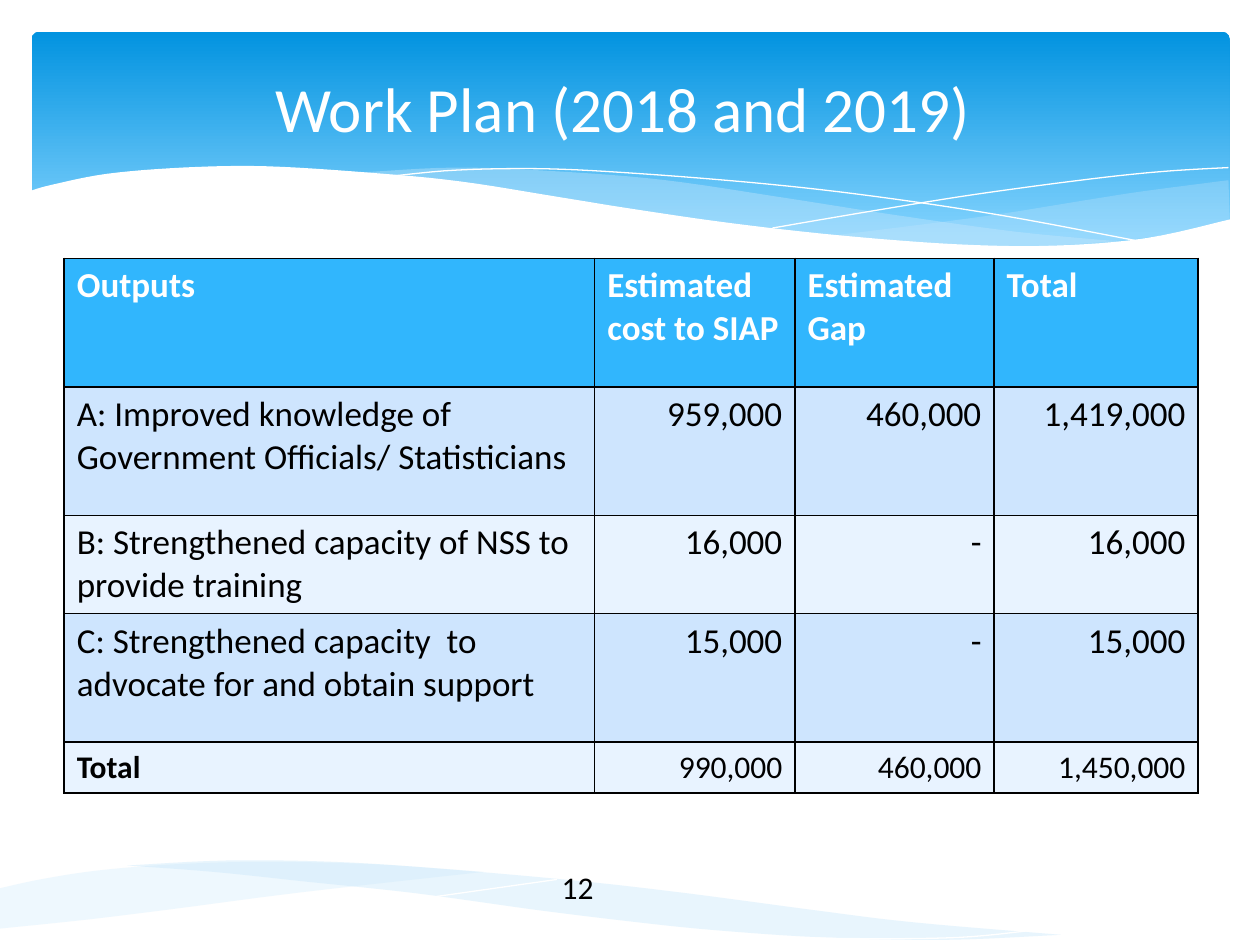
from pptx import Presentation
from pptx.dml.color import RGBColor
from pptx.enum.shapes import MSO_SHAPE as Preset
from pptx.enum.text import MSO_ANCHOR as Anchor, PP_ALIGN as Align
from pptx.oxml.ns import qn
from pptx.util import Inches, Pt
from lxml.etree import SubElement

COLORS = {
    "white": "FFFFFF", "black": "000000", "sky_top": "0293E0", "sky_bottom": "83D3FE",
    "wave": "C6E7FC", "header": "31B6FD", "band": "CEE5FE", "light": "E8F3FF",
}
FONT = "Calibri"
STEPS = 6

HEADER_RIGHT_WAVE = [
    [(9.5, 1.18), (8.81, 1.27), (8.36, 1.34), (7.54, 1.47), (6.36, 1.62)],
    [(6.36, 1.62), (7.07, 1.69), (7.78, 1.71), (8.38, 1.68), (8.96, 1.62), (9.51, 1.5)],
]
HEADER_LONG_WAVE = [
    [(8.68, 1.67), (7.82, 1.59), (6.81, 1.45), (6.04, 1.33), (5.03, 1.18), (4.17, 1.11),
     (3.36, 1.08), (2.61, 1.12)],
    [(2.61, 1.12), (3.58, 1.23), (4.24, 1.33), (5.41, 1.51), (6.4, 1.63), (7.36, 1.71),
     (8.13, 1.71), (8.68, 1.67)],
]
HEADER_LINES = [
    [(2.84, 1.15), (3.38, 1.1), (4.08, 1.09), (4.85, 1.13), (5.83, 1.21), (6.7, 1.31),
     (7.7, 1.46), (8.82, 1.67)],
    [(5.88, 1.56), (6.7, 1.42), (7.51, 1.29), (8.41, 1.17), (8.99, 1.11), (9.5, 1.08)],
]
HEADER_CUTOUT = [
    [(9.52, 1.49), (8.85, 1.64), (8.12, 1.7), (7.36, 1.69), (6.43, 1.62), (5.54, 1.52),
     (4.78, 1.41), (4.22, 1.32), (3.4, 1.19), (2.67, 1.12), (1.86, 1.07), (1.21, 1.08),
     (0.6, 1.13), (0.15, 1.22), (-0.02, 1.27)],
    [(-0.02, 2.05), (9.52, 2.05)],
]
FOOTER_LONG_WAVE = [
    [(1.01, 0.04), (1.8, 0), (2.63, 0.01), (3.43, 0.06), (4.57, 0.16), (5.45, 0.26),
     (6.43, 0.39), (7.24, 0.49), (8.42, 0.59)],
    [(8.42, 0.59), (7.5, 0.63), (6.52, 0.61), (5.64, 0.55), (4.97, 0.48), (4.24, 0.39),
     (3.3, 0.26), (2.45, 0.17), (1.69, 0.09), (1.01, 0.04)],
]
FOOTER_LINES = [
    [(0.84, 0.05), (1.77, 0.19), (2.63, 0.31), (3.43, 0.4), (4.15, 0.48), (5.12, 0.56),
     (5.95, 0.6), (6.83, 0.62), (7.61, 0.61), (8.14, 0.56)],
    [(0.01, 0.63), (0.64, 0.6), (1.34, 0.54), (2.07, 0.47), (2.79, 0.38), (3.43, 0.29),
     (4.42, 0.15)],
]
FOOTER_LEFT_WAVE = [
    [(0, 0.54), (0.68, 0.47), (1.41, 0.38), (2.41, 0.25), (3.84, 0.09)],
    [(3.84, 0.09), (2.98, 0.03), (2.11, 0.01), (1.38, 0.03), (0.77, 0.08), (0.32, 0.15),
     (0, 0.22)],
]
COLUMN_WIDTHS = [4.21, 1.59, 1.58, 1.62]
ROW_HEIGHTS = [1.02, 1.02, 0.78, 1.02, 0.4]
ROWS = [
    ["Outputs", "Estimated cost to SIAP", "Estimated Gap", "Total"],
    ["A: Improved knowledge of Government Officials/ Statisticians",
     "959,000", "460,000", "1,419,000"],
    ["B: Strengthened capacity of NSS to provide training", "16,000", "-", "16,000"],
    ["C: Strengthened capacity  to advocate for and obtain support", "15,000", "-", "15,000"],
    ["Total", "990,000", "460,000", "1,450,000"],
]


def rgb(name):
    return RGBColor.from_string(COLORS[name])


def smooth_curve(knots):
    if len(knots) < 3:
        return knots
    padded = [knots[0], *knots, knots[-1]]
    points = [knots[0]]
    for a, b, c, d in zip(padded, padded[1:], padded[2:], padded[3:]):
        for step in range(1, STEPS + 1):
            t = step / STEPS
            points.append(tuple(
                (2 * q + (r - p) * t + (2 * p - 5 * q + 4 * r - s) * t ** 2
                 + (3 * q - p - 3 * r + s) * t ** 3) / 2
                for p, q, r, s in zip(a, b, c, d)))
    return points


def add_curve(slide, box, edges, close):
    left, top = box[:2]
    points = [(Inches(left + x), Inches(top + y))
              for edge in edges for x, y in smooth_curve(edge)]
    builder = slide.shapes.build_freeform(*points[0])
    builder.add_line_segments(points[1:], close=close)
    shape = builder.convert_to_shape()
    shape.shadow.inherit = False
    return shape


def add_wave(slide, box, edges, color, opacity=100):
    shape = add_curve(slide, box, edges, True)
    shape.fill.solid()
    shape.fill.fore_color.rgb = rgb(color)
    shape.line.fill.background()
    if opacity < 100:
        fill_color = shape._element.spPr.find(".//" + qn("a:srgbClr"))
        SubElement(fill_color, qn("a:alpha"), val=str(opacity * 1000))


def add_hairline(slide, box, knots):
    shape = add_curve(slide, box, [knots], False)
    shape.fill.background()
    shape.line.color.rgb = rgb("white")
    shape.line.width = Pt(0)


def add_header(slide, box):
    panel = slide.shapes.add_shape(Preset.ROUNDED_RECTANGLE, *map(Inches, box))
    panel.adjustments[0] = 0.034
    panel.shadow.inherit = False
    panel.line.fill.background()
    panel.fill.gradient()
    panel.fill.gradient_angle = 270
    stops = zip(panel.fill.gradient_stops, ["sky_top", "sky_bottom"], [0, 0.9])
    for stop, color, position in stops:
        stop.color.rgb = rgb(color)
        stop.position = position
    add_wave(slide, box, HEADER_RIGHT_WAVE, "wave", 29)
    add_wave(slide, box, HEADER_LONG_WAVE, "wave", 40)
    for knots in HEADER_LINES:
        add_hairline(slide, box, knots)
    add_wave(slide, box, HEADER_CUTOUT, "white")


def add_footer(slide, box):
    add_wave(slide, box, FOOTER_LONG_WAVE, "wave", 40)
    for knots in FOOTER_LINES:
        add_hairline(slide, box, knots)
    add_wave(slide, box, FOOTER_LEFT_WAVE, "wave", 29)


def style_paragraph(paragraph, size, color, bold=False, align=Align.LEFT):
    paragraph.alignment = align
    paragraph.font.name = FONT
    paragraph.font.size = Pt(size)
    paragraph.font.bold = bold
    paragraph.font.color.rgb = rgb(color)


def add_label(slide, box, text, size, color, align=Align.LEFT, anchor=Anchor.TOP):
    frame = slide.shapes.add_textbox(*map(Inches, box)).text_frame
    frame.word_wrap = True
    frame.vertical_anchor = anchor
    frame.text = text
    style_paragraph(frame.paragraphs[0], size, color, align=align)


def add_borders(cell):
    properties = cell._tc.get_or_add_tcPr()
    for index, side in enumerate(["lnL", "lnR", "lnT", "lnB"]):
        line = properties.makeelement(qn("a:" + side), {"w": str(Pt(1))})
        fill = SubElement(line, qn("a:solidFill"))
        SubElement(fill, qn("a:srgbClr"), val=COLORS["black"])
        properties.insert(index, line)


def add_cost_table(slide, box):
    table = slide.shapes.add_table(len(ROWS), len(COLUMN_WIDTHS), *map(Inches, box)).table
    for column, width in zip(table.columns, COLUMN_WIDTHS):
        column.width = Inches(width)
    for row, height in zip(table.rows, ROW_HEIGHTS):
        row.height = Inches(height)
    last = len(ROWS) - 1
    for i, values in enumerate(ROWS):
        fill = "header" if i == 0 else "band" if i % 2 else "light"
        for j, value in enumerate(values):
            cell = table.cell(i, j)
            cell.text = value
            cell.fill.solid()
            cell.fill.fore_color.rgb = rgb(fill)
            add_borders(cell)
            style_paragraph(
                cell.text_frame.paragraphs[0], 18 if i == last else 20,
                "white" if i == 0 else "black", i == 0 or (i == last and j == 0),
                Align.RIGHT if i and j else Align.LEFT)


def main():
    presentation = Presentation()
    presentation.slide_width, presentation.slide_height = Inches(10), Inches(7.5)
    slide = presentation.slides.add_slide(presentation.slide_layouts[6])
    add_header(slide, (0.25, 0.25, 9.51, 1.82))
    add_footer(slide, (0, 6.83, 8.42, 0.63))
    add_cost_table(slide, (0.51, 2.05, 9, sum(ROW_HEIGHTS)))
    add_label(slide, (4.36, 6.84, 1.27, 0.4), "12", 18, "black")
    add_label(slide, (0.5, 0.17, 9, 1.37), "Work Plan (2018 and 2019) ", 36, "white",
              Align.CENTER, Anchor.MIDDLE)
    presentation.save("out.pptx")


if __name__ == "__main__":
    main()
